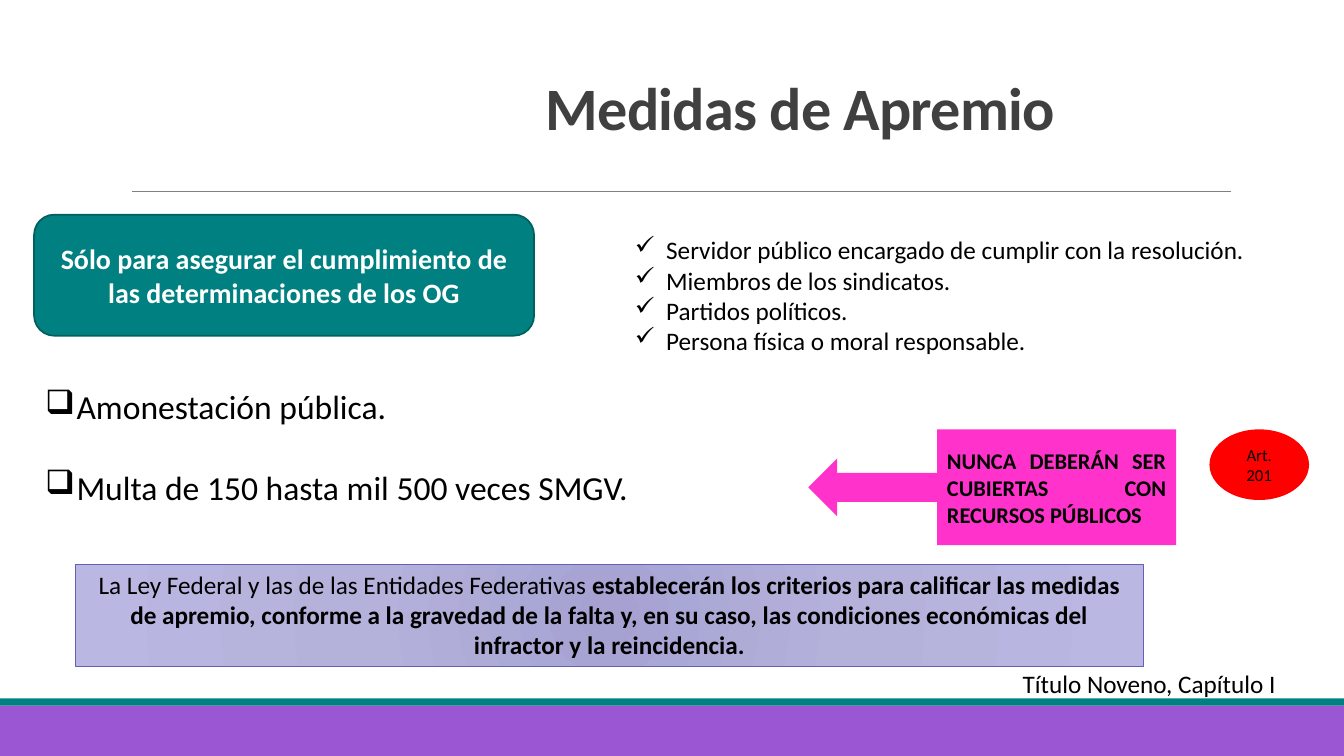
"""Build the slide on enforcement measures."""
from lxml import etree
from pptx import Presentation
from pptx import util as u
from pptx.dml.color import RGBColor
from pptx.enum import shapes, text
from pptx.oxml import ns, parse_xml

CENTER, JUSTIFY = text.PP_ALIGN.CENTER, text.PP_ALIGN.JUSTIFY
TOP, MIDDLE, BOTTOM = text.MSO_ANCHOR.TOP, text.MSO_ANCHOR.MIDDLE, text.MSO_ANCHOR.BOTTOM
KIND = shapes.MSO_SHAPE


def color(value):
    return RGBColor.from_string(value)


class Painter:
    font = "Calibri"
    ink = "000000"
    indent = u.Cm(0.79)

    def __init__(self, page):
        self.page = page

    def fill_text(self, box, paragraphs, size, align=CENTER, anchor=TOP, ink=ink,
                  bold=False, bullet=None, gap=0):
        frame = box.text_frame
        frame.word_wrap = True
        frame.vertical_anchor = anchor
        frame.text = "\n".join(paragraphs)
        for index, para in enumerate(frame.paragraphs):
            para.alignment = align
            if bullet:
                props = para._p.get_or_add_pPr()
                props.set("marL", str(self.indent))
                props.set("indent", str(-self.indent))
                etree.SubElement(props, ns.qn("a:buChar")).set("char", bullet)
            if index and gap:
                para.space_before = u.Pt(gap)
            for span in para.runs:
                self.style(span, size, ink, bold)
        return box

    def style(self, span, size, ink, bold):
        span.font.name = self.font
        span.font.size = u.Pt(size)
        span.font.bold = bold
        span.font.color.rgb = color(ink)

    def label(self, place, paragraphs, size, **options):
        box = self.page.shapes.add_textbox(*map(u.Cm, place))
        return self.fill_text(box, paragraphs, size, **options)

    def shape(self, kind, place, fill=None, line=None, width=1):
        box = self.page.shapes.add_shape(kind, *map(u.Cm, place))
        box.shadow.inherit = False
        if fill:
            box.fill.solid()
            box.fill.fore_color.rgb = color(fill)
        if line:
            box.line.color.rgb = color(line)
            box.line.width = u.Pt(width)
        else:
            box.line.fill.background()
        return box

    def radial(self, box, stops):
        marks = "".join(f'<a:gs pos="{at * 1000}"><a:srgbClr val="{tone}"/></a:gs>'
                        for at, tone in stops)
        fill = parse_xml(
            f'<a:gradFill {ns.nsdecls("a")} rotWithShape="1"><a:gsLst>{marks}</a:gsLst>'
            '<a:path path="circle"><a:fillToRect l="100000" t="100000" r="100000" '
            'b="100000"/></a:path></a:gradFill>')
        box._element.spPr.find(ns.qn("a:prstGeom")).addnext(fill)

    def rule(self, left, right, top, tone, width):
        line = self.page.shapes.add_connector(
            shapes.MSO_CONNECTOR.STRAIGHT, *map(u.Cm, (left, top, right, top)))
        line.line.color.rgb = color(tone)
        line.line.width = u.Pt(width)
        etree.SubElement(line._element.spPr, ns.qn("a:effectLst"))


def main():
    deck = Presentation()
    deck.slide_width, deck.slide_height = u.Cm(33.87), u.Cm(19.05)
    paint = Painter(deck.slides.add_slide(deck.slide_layouts[6]))

    paint.shape(KIND.RECTANGLE, (0, 17.78, 33.87, 1.27), "9B57D3")
    paint.shape(KIND.RECTANGLE, (0, 17.6, 33.87, 0.18), "008080")
    paint.rule(3.33, 31.01, 4.83, "808080", 0.5)

    title = paint.label((6.86, 1.57, 26.62, 2.16), ["Medidas de Apremio"], 43,
                        anchor=BOTTOM, ink="404040", bold=True)
    heading = title.text_frame.paragraphs[0]
    heading.line_spacing = 0.85
    heading.runs[0].font._element.set("spc", "-50")

    paint.label((25.25, 16.71, 7.42, 1.02), ["Título Noveno, Capítulo I"], 18)
    paint.label((0.89, 9.6, 16.71, 3.33),
                ["Amonestación pública.", "Multa de 150 hasta mil 500 veces SMGV."],
                24, align=JUSTIFY, bullet="❑", gap=29)

    law = paint.shape(KIND.RECTANGLE, (1.9, 14.22, 26.92, 2.57), line="665EB8")
    paint.radial(law, [(0, "A5A2D2"), (45, "B4B2DB"), (100, "BAB8E2")])
    paint.fill_text(law, ["La Ley Federal y las de las Entidades Federativas "], 18)
    span = law.text_frame.paragraphs[0].add_run()
    span.text = ("establecerán los criterios para calificar las medidas de apremio, "
                 "conforme a la gravedad de la falta y, en su caso, las condiciones "
                 "económicas del infractor y la reincidencia.")
    paint.style(span, 18, paint.ink, True)

    article = paint.shape(KIND.OVAL, (30.48, 10.82, 2.51, 1.78), "FF0000")
    paint.fill_text(article, ["Art. 201"], 12, anchor=MIDDLE)

    paint.label((15.75, 5.79, 16.92, 3.33),
                ["Servidor público encargado de cumplir con la resolución.",
                 "Miembros de los sindicatos.", "Partidos políticos.",
                 "Persona física o moral responsable."],
                18, align=JUSTIFY, bullet="✓")

    purpose = paint.shape(KIND.ROUNDED_RECTANGLE, (0.86, 5.41, 12.6, 3.05),
                          "008080", "005F5F", 1.25)
    paint.fill_text(purpose,
                    ["Sólo para asegurar el cumplimiento de las determinaciones de los OG"],
                    20, anchor=MIDDLE, ink="FFFFFF", bold=True)

    warning = paint.shape(KIND.LEFT_ARROW_CALLOUT, (20.37, 10.82, 9.27, 2.92), "FF33CC")
    paint.fill_text(warning, ["NUNCA DEBERÁN SER CUBIERTAS CON RECURSOS PÚBLICOS"], 16,
                    align=JUSTIFY, anchor=MIDDLE, bold=True)

    deck.save("out.pptx")


if __name__ == "__main__":
    main()
